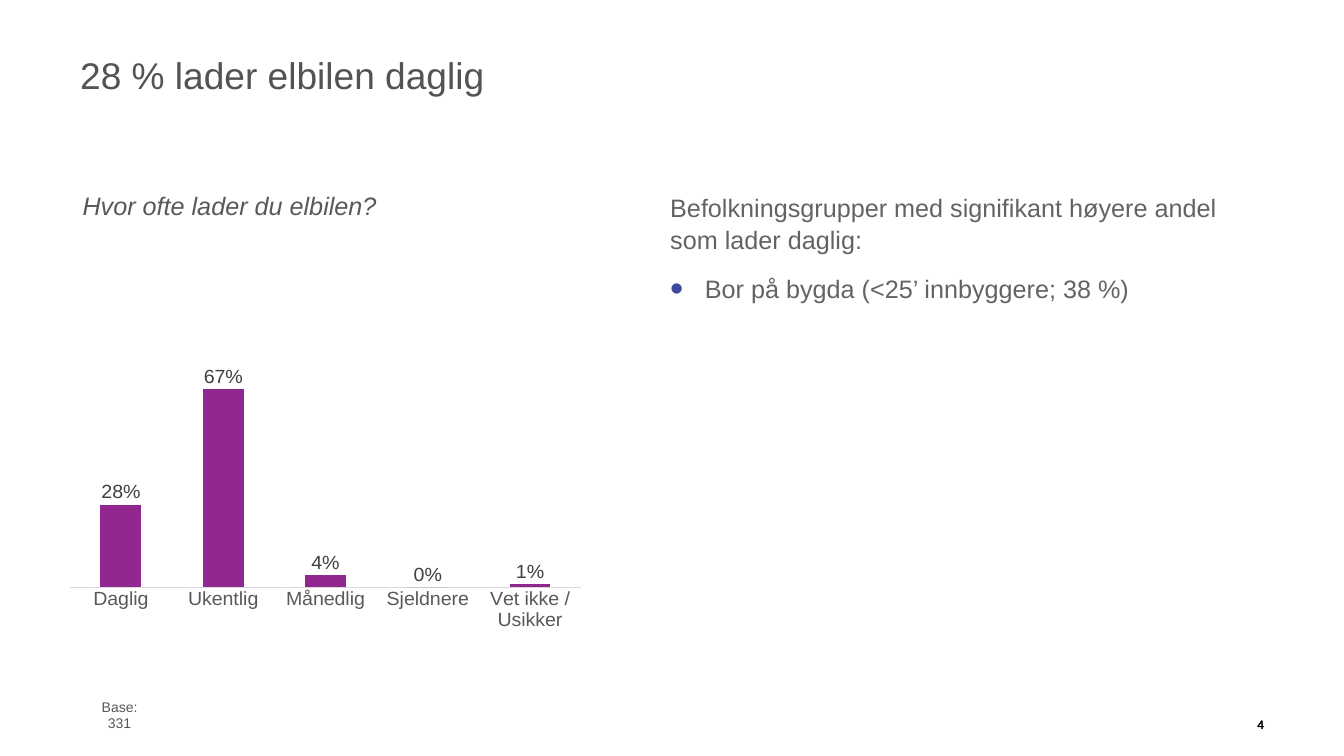
"""Build the slide on how often electric cars are charged."""
from dataclasses import dataclass

from lxml import etree
from pptx import Presentation
from pptx.chart.data import CategoryChartData
from pptx.dml.color import RGBColor
from pptx.enum import chart as ch, text
from pptx.oxml import parse_xml
from pptx.oxml.ns import nsdecls, qn
from pptx.util import Cm, Pt

BLACK = RGBColor(0x00, 0x00, 0x00)
TITLE = RGBColor(0x53, 0x53, 0x53)
BODY = RGBColor(0x62, 0x63, 0x62)
MUTED = RGBColor(0x59, 0x59, 0x59)
LABEL = RGBColor(0x40, 0x40, 0x40)
AXIS = RGBColor(0xD9, 0xD9, 0xD9)
PURPLE = RGBColor(0x92, 0x27, 0x8F)
BULLET = RGBColor(0x3D, 0x4A, 0x9A)
INSET = Cm(0.15)
INDENT = Cm(1.75)
MIDDLE = text.MSO_ANCHOR.MIDDLE
TOP = text.MSO_ANCHOR.TOP


@dataclass(frozen=True)
class Box:
    left: float
    top: float
    width: float
    height: float

    def lengths(self) -> tuple:
        return Cm(self.left), Cm(self.top), Cm(self.width), Cm(self.height)


@dataclass(frozen=True)
class Style:
    size: float
    color: RGBColor
    name: str = "Arial"
    italic: bool = False


@dataclass(frozen=True)
class Note:
    words: str
    box: Box
    style: Style
    align: text.PP_ALIGN = text.PP_ALIGN.CENTER
    anchor: text.MSO_ANCHOR = MIDDLE


NOTES = [
    Note("4", Box(63.02, 35.97, 1.07, 1.07), Style(18, BLACK, "Karla"), anchor=TOP),
    Note("4", Box(63.09, 35.97, 0.89, 1.07), Style(18, BLACK), anchor=TOP),
    Note("Base: 331", Box(4.29, 35.46, 3.48, 1.14), Style(20, MUTED)),
    Note("Hvor ofte lader du elbilen?", Box(4.01, 9.42, 15.24, 1.83),
         Style(36, MUTED, italic=True), text.PP_ALIGN.LEFT),
]
CHARGING = {"Daglig": 0.28, "Ukentlig": 0.67, "Månedlig": 0.04,
            "Sjeldnere": 0, "Vet ikke / Usikker": 0.01}


def style_font(font, style: Style) -> None:
    font.name, font.size, font.italic = style.name, Pt(style.size), style.italic
    font.color.rgb = style.color


def add_run(p, words: str, style: Style) -> None:
    r = p.add_run()
    r.text = words
    style_font(r.font, style)


def set_frame(tf, anchor, wrap: bool) -> None:
    tf.margin_left = tf.margin_right = tf.margin_top = tf.margin_bottom = INSET
    tf.vertical_anchor = anchor
    tf.word_wrap = wrap
    tf.auto_size = text.MSO_AUTO_SIZE.NONE if wrap else text.MSO_AUTO_SIZE.SHAPE_TO_FIT_TEXT


def place(sp, box: Box) -> None:
    sp.left, sp.top, sp.width, sp.height = box.lengths()


def add_note(s, note: Note) -> None:
    tf = s.shapes.add_textbox(*note.box.lengths()).text_frame
    set_frame(tf, note.anchor, False)
    p = tf.paragraphs[0]
    p.alignment = note.align
    add_run(p, note.words, note.style)


def set_bullet(p, bulleted: bool) -> None:
    pPr = p._p.get_or_add_pPr()
    pPr.set("marL", str(INDENT if bulleted else 0))
    pPr.set("indent", str(-INDENT if bulleted else 0))
    if not bulleted:
        etree.SubElement(pPr, qn("a:buNone"))
        return
    color = etree.SubElement(pPr, qn("a:buClr"))
    etree.SubElement(color, qn("a:srgbClr"), val=str(BULLET))
    etree.SubElement(pPr, qn("a:buSzPct"), val="150000")
    etree.SubElement(pPr, qn("a:buFont"), typeface="Arial")
    etree.SubElement(pPr, qn("a:buChar"), char="•")


def fill_title(sp) -> None:
    place(sp, Box(3.89, 1.19, 60.1, 5.18))
    set_frame(sp.text_frame, MIDDLE, True)
    p = sp.text_frame.paragraphs[0]
    p.alignment = text.PP_ALIGN.LEFT
    add_run(p, "28 % lader elbilen daglig", Style(53, TITLE))


def fill_body(sp) -> None:
    place(sp, Box(33.63, 9.42, 28.6, 25.32))
    tf = sp.text_frame
    set_frame(tf, TOP, True)
    lines = ["Befolkningsgrupper med signifikant høyere andel som lader daglig:",
             "Bor på bygda (<25’ innbyggere; 38 %)"]
    for i, words in enumerate(lines):
        p = tf.add_paragraph() if i else tf.paragraphs[0]
        set_bullet(p, i > 0)
        p.space_before, p.space_after = Pt(18 if i else 0), Pt(6)
        p.line_spacing = 1.07
        add_run(p, words, Style(36, BODY))


def set_plot_layout(plot, x: float, y: float, w: float, h: float) -> None:
    area = plot._element.getparent()
    for old in area.findall(qn("c:layout")):
        area.remove(old)
    area.insert(0, parse_xml(
        f'<c:layout {nsdecls("c")}><c:manualLayout><c:layoutTarget val="inner"/>'
        '<c:xMode val="edge"/><c:yMode val="edge"/>'
        f'<c:x val="{x}"/><c:y val="{y}"/><c:w val="{w}"/><c:h val="{h}"/>'
        '</c:manualLayout></c:layout>'))


def add_charging_chart(s) -> None:
    data = CategoryChartData(number_format="0%")
    data.categories = list(CHARGING)
    data.add_series("Series 1", list(CHARGING.values()))
    chart = s.shapes.add_chart(ch.XL_CHART_TYPE.COLUMN_CLUSTERED,
                               *Box(3.25, 11.1, 26.85, 20.7).lengths(), data).chart
    chart.has_legend = chart.has_title = False
    style_font(chart.font, Style(28, BLACK))

    plot = chart.plots[0]
    plot.gap_width, plot.overlap, plot.vary_by_categories = 150, -25, False
    set_plot_layout(plot, 0.01, 0.18, 0.96, 0.74)
    fill = plot.series[0].format.fill
    fill.solid()
    fill.fore_color.rgb = PURPLE
    plot.has_data_labels = True
    labels = plot.data_labels
    labels.show_value = True
    labels.number_format, labels.number_format_is_linked = "0%", False
    labels.position = ch.XL_LABEL_POSITION.OUTSIDE_END
    style_font(labels.font, Style(28, LABEL))

    cats, vals = chart.category_axis, chart.value_axis
    cats.major_tick_mark = cats.minor_tick_mark = ch.XL_TICK_MARK.NONE
    cats.format.line.color.rgb, cats.format.line.width = AXIS, Pt(0.75)
    style_font(cats.tick_labels.font, Style(28, MUTED))
    vals.minimum_scale, vals.maximum_scale = 0, 1
    vals.has_major_gridlines = vals.visible = False


def main() -> None:
    prs = Presentation()
    prs.slide_width, prs.slide_height = Cm(67.74), Cm(38.1)
    s = prs.slides.add_slide(prs.slide_layouts[1])
    fill_title(s.shapes.title)
    fill_body(s.placeholders[1])
    add_charging_chart(s)
    for note in NOTES:
        add_note(s, note)
    prs.save("out.pptx")


if __name__ == "__main__":
    main()
